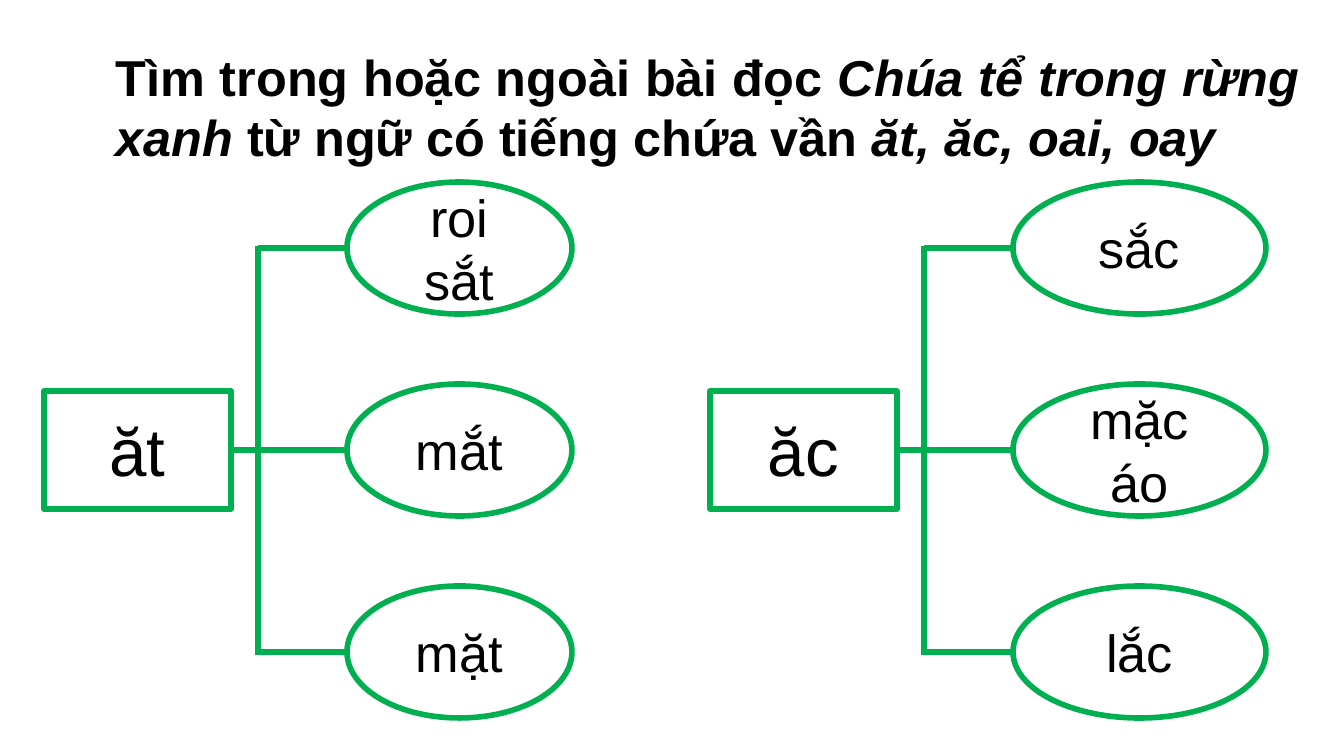
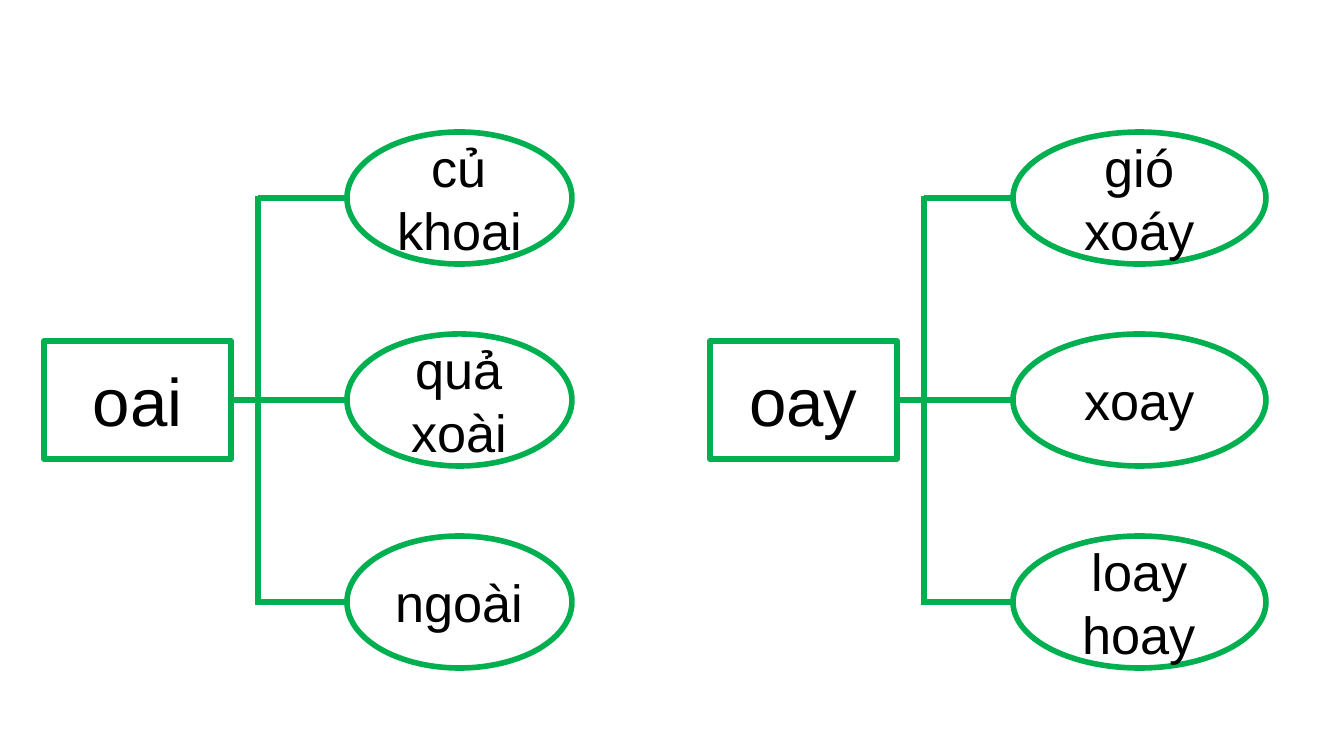
import pptx
import pptx.util
import pptx.dml.color
import pptx.enum.shapes
import pptx.enum.text
import lxml.etree

# Content: title runs are (text, italic); a tree is (rhyme, words)
SLIDES = [
    {
        "title": [
            ("Tìm trong hoặc ngoài bài đọc ", False),
            ("Chúa tể trong rừng xanh ", True),
            ("từ ngữ có tiếng chứa vần ", False),
            ("ăt, ăc, oai, oay", True),
        ],
        "mid": 450,
        "trees": [("ăt", ["roi sắt", "mắt", "mặt"]),
                  ("ăc", ["sắc", "mặc áo", "lắc"])],
    },
    {
        "title": None,
        "mid": 400,
        "trees": [("oai", ["củ khoai", "quả xoài", "ngoài"]),
                  ("oay", ["gió xoáy", "xoay", "loay hoay"])],
    },
]

# Shared look, lengths in px
COLORS = {"paper": "FFFFFF", "ink": "000000", "green": "00B050"}
FONT = "Arial"
SCALE = 914400 / 134.4
WIDE, HIGH = 1344, 756
TITLE = (102, 39, 1211, 136)
LEFTS = (44, 710)           # left edge of each tree
OVALS = (225, 253)          # oval width in each tree
BOX_W, BOX_H = 187, 118
OVAL_H, STEP = 132, 202
SPINE, BRANCH = 214, 303    # offsets from the left edge of a tree
KIND = pptx.enum.shapes.MSO_SHAPE
ALIGN = pptx.enum.text.PP_ALIGN
ANCHOR = pptx.enum.text.MSO_ANCHOR


def emu(px):
    return pptx.util.Emu(round(px * SCALE))


def color(name):
    return pptx.dml.color.RGBColor.from_string(COLORS[name])


def style(par, size, align, bold=False):
    par.alignment = align
    par.font.name = FONT
    par.font.size = pptx.util.Pt(size)
    par.font.bold = bold
    par.font.color.rgb = color("ink")


def stroke(item):
    item.line.color.rgb = color("green")
    item.line.width = pptx.util.Pt(3)


def link(slide, x1, y1, x2, y2):
    line = slide.shapes.add_connector(
        pptx.enum.shapes.MSO_CONNECTOR.STRAIGHT, *map(emu, (x1, y1, x2, y2)))
    stroke(line)
    props = line._element.spPr
    lxml.etree.SubElement(props, pptx.oxml.ns.qn("a:effectLst"))


def node(slide, kind, left, mid, width, height, text, size):
    shape = slide.shapes.add_shape(
        kind, *map(emu, (left, mid - height / 2, width, height)))
    shape.shadow.inherit = False
    shape.fill.background()
    stroke(shape)
    frame = shape.text_frame
    frame.word_wrap = True
    frame.vertical_anchor = ANCHOR.MIDDLE
    frame.text = text
    style(frame.paragraphs[0], size, ALIGN.CENTER)


def tree(slide, left, mid, width, rhyme, words):
    spine, branch = left + SPINE, left + BRANCH
    rows = [mid + (i - 1) * STEP for i in range(len(words))]
    node(slide, KIND.RECTANGLE, left, mid, BOX_W, BOX_H, rhyme, 36)

    # Stem, branches and spine
    link(slide, left + BOX_W, mid, spine + 4, mid)
    for row in rows:
        link(slide, spine, row, branch, row)
    link(slide, spine, rows[0] - 2, spine, rows[-1] + 3)

    # Words
    for row, word in zip(rows, words):
        node(slide, KIND.OVAL, branch, row, width, OVAL_H, word, 28)


def head(slide, runs):
    title = slide.shapes.title
    title.left, title.top, title.width, title.height = map(emu, TITLE)
    frame = title.text_frame
    frame.word_wrap = True
    frame.auto_size = pptx.enum.text.MSO_AUTO_SIZE.NONE
    frame.vertical_anchor = ANCHOR.TOP
    par = frame.paragraphs[0]
    style(par, 27, ALIGN.JUSTIFY, bold=True)
    for text, slant in runs:
        run = par.add_run()
        run.text = text
        run.font.italic = slant


def main():
    deck = pptx.Presentation()
    deck.slide_width, deck.slide_height = emu(WIDE), emu(HIGH)
    for page in SLIDES:
        layout = deck.slide_layouts[5 if page["title"] else 6]
        slide = deck.slides.add_slide(layout)
        slide.background.fill.solid()
        slide.background.fill.fore_color.rgb = color("paper")
        if page["title"]:
            head(slide, page["title"])
        for left, width, (rhyme, words) in zip(LEFTS, OVALS, page["trees"]):
            tree(slide, left, page["mid"], width, rhyme, words)
    deck.save("out.pptx")


if __name__ == "__main__":
    main()
